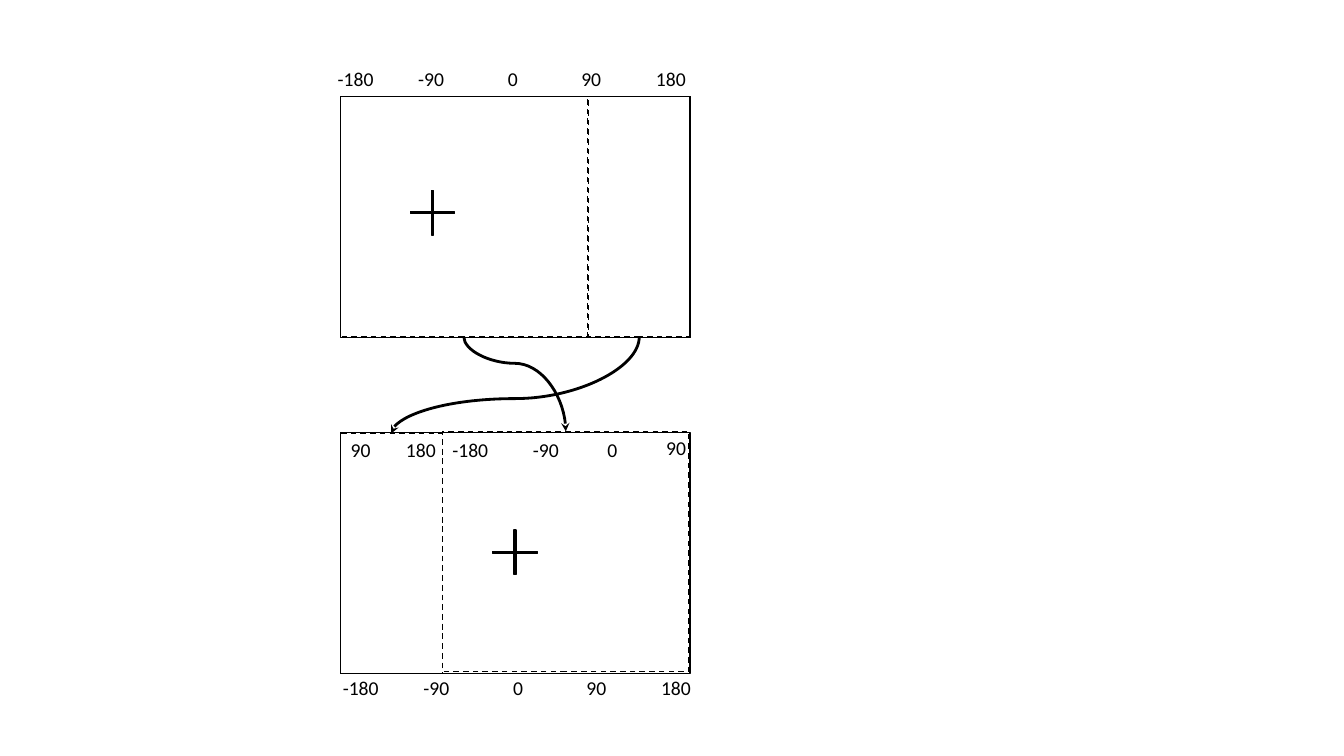
from dataclasses import dataclass

from lxml import etree
from pptx import Presentation
from pptx import util as u
from pptx.dml.color import RGBColor
from pptx.enum import dml, shapes, text
from pptx.oxml import ns


@dataclass(frozen=True)
class Theme:
    ink: RGBColor = RGBColor(0, 0, 0)
    paper: RGBColor = RGBColor(255, 255, 255)
    font: str = "Calibri"
    label_size: u.Pt = u.Pt(14)
    thin: u.Pt = u.Pt(1)
    thick: u.Pt = u.Pt(2)


THEME = Theme()
PANEL_LEFT, PANEL_W, PANEL_H = 8.58, 8.81, 6.07
TOP_PANEL, BOTTOM_PANEL = 2.44, 10.9
STRIP_W, WIDE_W, REGION_H = 2.57, 6.22, 6.05
LABEL_H, CROSS_SIZE = 0.86, 1.12
LABEL_WIDTHS = {"-180": 1.42, "-90": 1.17, "0": 0.76, "90": 1.02, "180": 1.27}
AXIS_LEFTS = (8.26, 10.29, 12.55, 14.4, 16.28)
SHIFTED_LABELS = (
    ("90", 8.59, 10.92), ("180", 9.98, 10.9), ("-180", 11.15, 10.9),
    ("-90", 13.18, 10.9), ("0", 15.06, 10.92), ("90", 16.54, 10.87),
)


def add_outlined(slide, kind, left, top, width, height, fill=None):
    sp = slide.shapes.add_shape(kind, u.Cm(left), u.Cm(top), u.Cm(width), u.Cm(height))
    sp.shadow.inherit = False
    if fill is None:
        sp.fill.background()
    else:
        sp.fill.solid()
        sp.fill.fore_color.rgb = fill
    sp.line.color.rgb = THEME.ink
    sp.line.width = THEME.thin
    return sp


def add_panel(slide, top):
    add_outlined(slide, shapes.MSO_SHAPE.RECTANGLE, PANEL_LEFT, top,
                 PANEL_W, PANEL_H, THEME.paper)


def add_region(slide, left, top, width):
    sp = add_outlined(slide, shapes.MSO_SHAPE.RECTANGLE, left, top, width, REGION_H)
    sp.line.dash_style = dml.MSO_LINE.DASH


def add_cross(slide, left, top):
    sp = add_outlined(slide, shapes.MSO_SHAPE.CROSS, left, top,
                      CROSS_SIZE, CROSS_SIZE, THEME.ink)
    sp.adjustments[0] = 0.48


def add_label(slide, label, left, top):
    sp = slide.shapes.add_textbox(u.Cm(left), u.Cm(top),
                                  u.Cm(LABEL_WIDTHS[label]), u.Cm(LABEL_H))
    tf = sp.text_frame
    tf.word_wrap = False
    tf.auto_size = text.MSO_AUTO_SIZE.SHAPE_TO_FIT_TEXT
    p = tf.paragraphs[0]
    p.text = label
    p.font.name = THEME.font
    p.font.size = THEME.label_size
    p.font.color.rgb = THEME.ink


def add_axis(slide, top, shift=0):
    for label, left in zip(LABEL_WIDTHS, AXIS_LEFTS):
        add_label(slide, label, left + shift, top)


def add_curved_arrow(slide, start, end, bend):
    """Draw an arrow that leaves and arrives vertically, turning at the share bend."""
    (x1, y1), (x2, y2) = start, end
    cx, cy = (x1 + x2) / 2, (y1 + y2) / 2
    half_w, half_h = (y2 - y1) / 2, abs(x2 - x1) / 2
    # The frame is turned a quarter, so its width is the vertical distance.
    side = 1 if x2 < x1 else -1
    c = slide.shapes.add_connector(
        shapes.MSO_CONNECTOR.CURVE,
        u.Cm(cx - side * half_w), u.Cm(cy - half_h),
        u.Cm(cx + side * half_w), u.Cm(cy + half_h))
    c.rotation = 90 if side == 1 else 270
    c.line.color.rgb = THEME.ink
    c.line.width = THEME.thick
    sp_pr = c._element.spPr
    guides = sp_pr.find(ns.qn("a:prstGeom")).find(ns.qn("a:avLst"))
    etree.SubElement(guides, ns.qn("a:gd"), name="adj1", fmla=f"val {round(bend * 100000)}")
    etree.SubElement(c.line._get_or_add_ln(), ns.qn("a:tailEnd"), type="stealth")
    etree.SubElement(sp_pr, ns.qn("a:effectLst"))


def main():
    prs = Presentation()
    prs.slide_width, prs.slide_height = u.Cm(33.87), u.Cm(19.05)
    slide = prs.slides.add_slide(prs.slide_layouts[6])

    add_panel(slide, TOP_PANEL)
    add_axis(slide, 1.57)
    add_panel(slide, BOTTOM_PANEL)
    add_axis(slide, 16.92, shift=0.13)
    add_cross(slide, 10.34, 4.8)
    add_cross(slide, 12.42, 13.36)

    add_region(slide, 14.83, TOP_PANEL, STRIP_W)
    add_region(slide, PANEL_LEFT, 10.92, STRIP_W)
    add_curved_arrow(slide, (16.11, 8.49), (9.86, 10.92), 0.64)
    add_curved_arrow(slide, (11.69, 8.49), (14.26, 10.87), 0.28)
    add_region(slide, PANEL_LEFT, TOP_PANEL, WIDE_W)
    add_region(slide, 11.15, 10.87, WIDE_W)

    for label, left, top in SHIFTED_LABELS:
        add_label(slide, label, left, top)

    prs.save("out.pptx")


if __name__ == "__main__":
    main()
